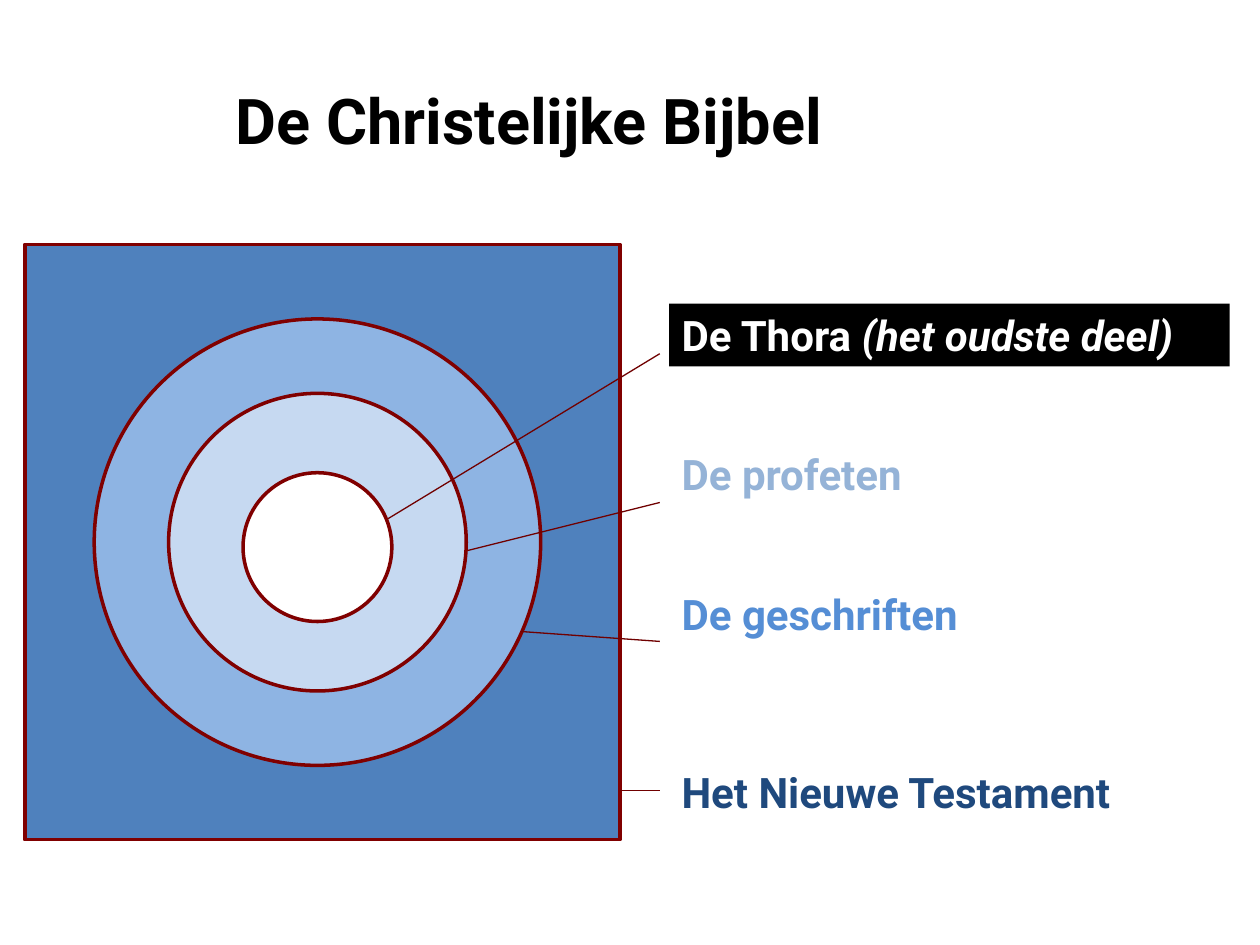
from lxml import etree
from pptx import Presentation
from pptx.dml.color import RGBColor
from pptx.enum.shapes import MSO_CONNECTOR, MSO_SHAPE
from pptx.enum.text import MSO_AUTO_SIZE
from pptx.oxml.ns import qn
from pptx.util import Cm, Pt

RECTANGLE, OVAL = MSO_SHAPE.RECTANGLE, MSO_SHAPE.OVAL
STRAIGHT = MSO_CONNECTOR.STRAIGHT
GROW = MSO_AUTO_SIZE.SHAPE_TO_FIT_TEXT

COLORS = {
    "testament": "4F81BD", "writings": "8EB4E3", "prophets": "C6D9F1",
    "white": "FFFFFF", "black": "000000",
    "outline": "800000", "leader": "700000",
    "prophets_text": "95B3D7", "writings_text": "558ED5",
    "testament_text": "1F497D",
}


def rgb(name):
    return RGBColor.from_string(COLORS[name])


class BibleSlide:
    """Holds the text style and the slide being drawn."""

    def __init__(self, slide):
        self.slide = slide
        self.style = {"name": "Roboto", "bold": True}

    def area(self, kind, left, top, size, fill):
        shape = self.slide.shapes.add_shape(
            kind, Cm(left), Cm(top), Cm(size), Cm(size))
        shape.shadow.inherit = False
        shape.fill.solid()
        shape.fill.fore_color.rgb = rgb(fill)
        shape.line.color.rgb = rgb("outline")
        shape.line.width = Pt(2)

    def circle(self, center_x, center_y, diameter, fill):
        radius = diameter / 2
        self.area(OVAL, center_x - radius, center_y - radius, diameter, fill)

    def leader(self, start_x, start_y, end_y, end_x=13.3):
        connector = self.slide.shapes.add_connector(
            STRAIGHT, Cm(start_x), Cm(start_y), Cm(end_x), Cm(end_y))
        connector.line.color.rgb = rgb("leader")
        connector.line.width = Pt(0.75)
        etree.SubElement(connector._element.spPr, qn("a:effectLst"))

    def text(self, left, top, width, height, runs, color, size=24,
             wrap=False, fill=None):
        box = self.slide.shapes.add_textbox(
            Cm(left), Cm(top), Cm(width), Cm(height))
        if fill:
            box.fill.solid()
            box.fill.fore_color.rgb = rgb(fill)
        frame = box.text_frame
        frame.word_wrap = wrap
        frame.auto_size = GROW
        for content, extra in runs:
            run = frame.paragraphs[0].add_run()
            run.text = content
            run.font.color.rgb = rgb(color)
            values = {**self.style, "size": Pt(size), **extra}
            for attribute, value in values.items():
                setattr(run.font, attribute, value)

    def label(self, top, width, runs, color, **options):
        self.text(13.49, top, width, 1.27, runs, color, **options)


def main():
    presentation = Presentation()
    presentation.slide_width, presentation.slide_height = Cm(25.4), Cm(19.05)
    bible = BibleSlide(presentation.slides.add_slide(
        presentation.slide_layouts[6]))

    # New Testament square and outer circle
    bible.area(RECTANGLE, 0.5, 4.93, 12, "testament")
    bible.circle(6.4, 10.93, 9, "writings")

    # Leaders beneath the middle circle
    bible.leader(9.3, 11.13, 10.13)
    bible.leader(10.5, 12.73, 12.93)
    bible.leader(12.5, 15.93, 15.93)

    # Labels
    bible.label(6.12, 11.3, [("De Thora ", {}),
                             ("(het oudste deel)", {"italic": True})],
                "white", wrap=True, fill="black")
    for top, width, content, color in (
            (8.92, 5.3, "De profeten", "prophets_text"),
            (11.73, 6.38, "De geschriften", "writings_text"),
            (15.32, 9.85, "Het Nieuwe Testament", "testament_text")):
        bible.label(top, width, [(content, {})], color)

    # Inner circles, with the Thora leader between them
    bible.circle(6.4, 10.93, 6, "prophets")
    bible.leader(7.7, 10.53, 7.13)
    bible.circle(6.4, 11.03, 3, "white")

    # Title
    bible.text(4.5, 1.52, 13, 1.8, [("De Christelijke Bijbel", {})],
               "black", size=36, wrap=True)

    presentation.save("out.pptx")


if __name__ == "__main__":
    main()
